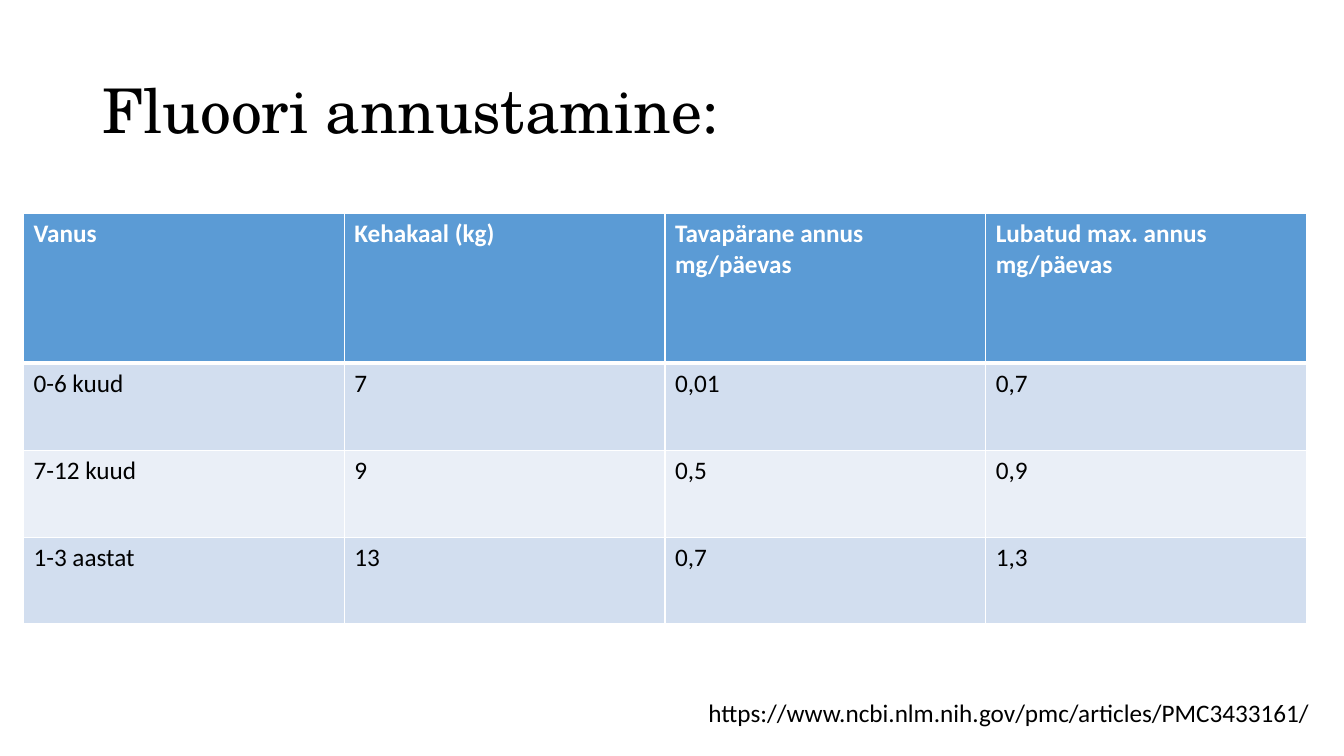
from dataclasses import dataclass

from lxml import etree
from pptx import Presentation
from pptx.dml.color import RGBColor
from pptx.enum.text import MSO_ANCHOR, MSO_AUTO_SIZE
from pptx.oxml.ns import qn
from pptx.slide import Slide
from pptx.table import _Cell
from pptx.text.text import _Paragraph
from pptx.util import Pt

MIDDLE = MSO_ANCHOR.MIDDLE
TOP = MSO_ANCHOR.TOP
NO_AUTOFIT = MSO_AUTO_SIZE.NONE
GROW_TO_TEXT = MSO_AUTO_SIZE.SHAPE_TO_FIT_TEXT

COLOURS = {
    "white": "FFFFFF",
    "black": "000000",
    "header": "5B9BD5",
    "odd_row": "D2DEEF",
    "even_row": "EAEFF7",
}

# Dosage table: header row, then one row per age group
DOSAGES = [
    ["Vanus", "Kehakaal (kg)", "Tavapärane annus mg/päevas", "Lubatud max. annus mg/päevas"],
    ["0-6 kuud", "7", "0,01", "0,7"],
    ["7-12 kuud", "9", "0,5", "0,9"],
    ["1-3 aastat", "13", "0,7", "1,3"],
]
TABLE_LEFT, TABLE_TOP = 16.8, 152.8
COLUMN_WIDTH = 229.1
HEADER_HEIGHT, ROW_HEIGHT = 106.7, 62.1
THIN_BORDER, HEADER_BORDER = 1, 3


@dataclass
class TextStyle:
    size: float
    font: str = "Calibri"
    colour: str = "black"
    bold: bool = False


@dataclass
class Label:
    text: str
    left: float
    top: float
    width: float
    height: float
    style: TextStyle
    frame_format: dict
    line_spacing: float = 1.0


LABELS = [
    Label("Fluoori annustamine:", 66, 28.75, 828, 104.4,
          TextStyle(44, font="TeX Gyre Schola"),
          {"word_wrap": True, "vertical_anchor": MIDDLE, "auto_size": NO_AUTOFIT},
          line_spacing=0.9),
    Label("https://www.ncbi.nlm.nih.gov/pmc/articles/PMC3433161/", 499, 494.6, 448.6, 29.1,
          TextStyle(18),
          {"word_wrap": False, "vertical_anchor": TOP, "auto_size": GROW_TO_TEXT}),
]


def colour(name: str) -> RGBColor:
    return RGBColor.from_string(COLOURS[name])


def write_text(paragraph: _Paragraph, text: str, style: TextStyle) -> None:
    run = paragraph.add_run()
    run.text = text
    font_format = {"size": Pt(style.size), "name": style.font, "bold": style.bold}
    for attribute, value in font_format.items():
        setattr(run.font, attribute, value)
    run.font.color.rgb = colour(style.colour)


def add_label(slide: Slide, label: Label) -> None:
    shape = slide.shapes.add_textbox(
        Pt(label.left), Pt(label.top), Pt(label.width), Pt(label.height))
    for attribute, value in label.frame_format.items():
        setattr(shape.text_frame, attribute, value)
    paragraph = shape.text_frame.paragraphs[0]
    paragraph.line_spacing = label.line_spacing
    write_text(paragraph, label.text, label.style)


def add_borders(cell: _Cell, widths: dict[str, float]) -> None:
    properties = cell._tc.get_or_add_tcPr()
    for side, width in widths.items():
        line = etree.SubElement(properties, qn(f"a:ln{side}"), w=str(Pt(width)))
        fill = etree.SubElement(line, qn("a:solidFill"))
        etree.SubElement(fill, qn("a:srgbClr"), val=COLOURS["white"])


def add_dosage_table(slide: Slide) -> None:
    row_count, column_count = len(DOSAGES), len(DOSAGES[0])
    heights = [HEADER_HEIGHT] + [ROW_HEIGHT] * (row_count - 1)
    table = slide.shapes.add_table(
        row_count, column_count, Pt(TABLE_LEFT), Pt(TABLE_TOP),
        Pt(COLUMN_WIDTH * column_count), Pt(sum(heights))).table
    for column in table.columns:
        column.width = Pt(COLUMN_WIDTH)

    for row_index, values in enumerate(DOSAGES):
        table.rows[row_index].height = Pt(heights[row_index])
        is_header = row_index == 0
        style = TextStyle(18, colour="white" if is_header else "black", bold=is_header)
        band = "header" if is_header else "odd_row" if row_index % 2 else "even_row"
        borders = {
            "L": THIN_BORDER,
            "R": THIN_BORDER,
            "T": HEADER_BORDER if row_index == 1 else THIN_BORDER,
            "B": HEADER_BORDER if is_header else THIN_BORDER,
        }
        for column_index, value in enumerate(values):
            cell = table.cell(row_index, column_index)
            # Borders come before the fill in the cell's XML
            add_borders(cell, borders)
            cell.fill.solid()
            cell.fill.fore_color.rgb = colour(band)
            write_text(cell.text_frame.paragraphs[0], value, style)


def main() -> None:
    presentation = Presentation()
    presentation.slide_width, presentation.slide_height = Pt(960), Pt(540)
    slide = presentation.slides.add_slide(presentation.slide_layouts[6])

    # Title and source address around the table
    title, source = LABELS
    add_label(slide, title)
    add_dosage_table(slide)
    add_label(slide, source)

    presentation.save("out.pptx")


if __name__ == "__main__":
    main()
